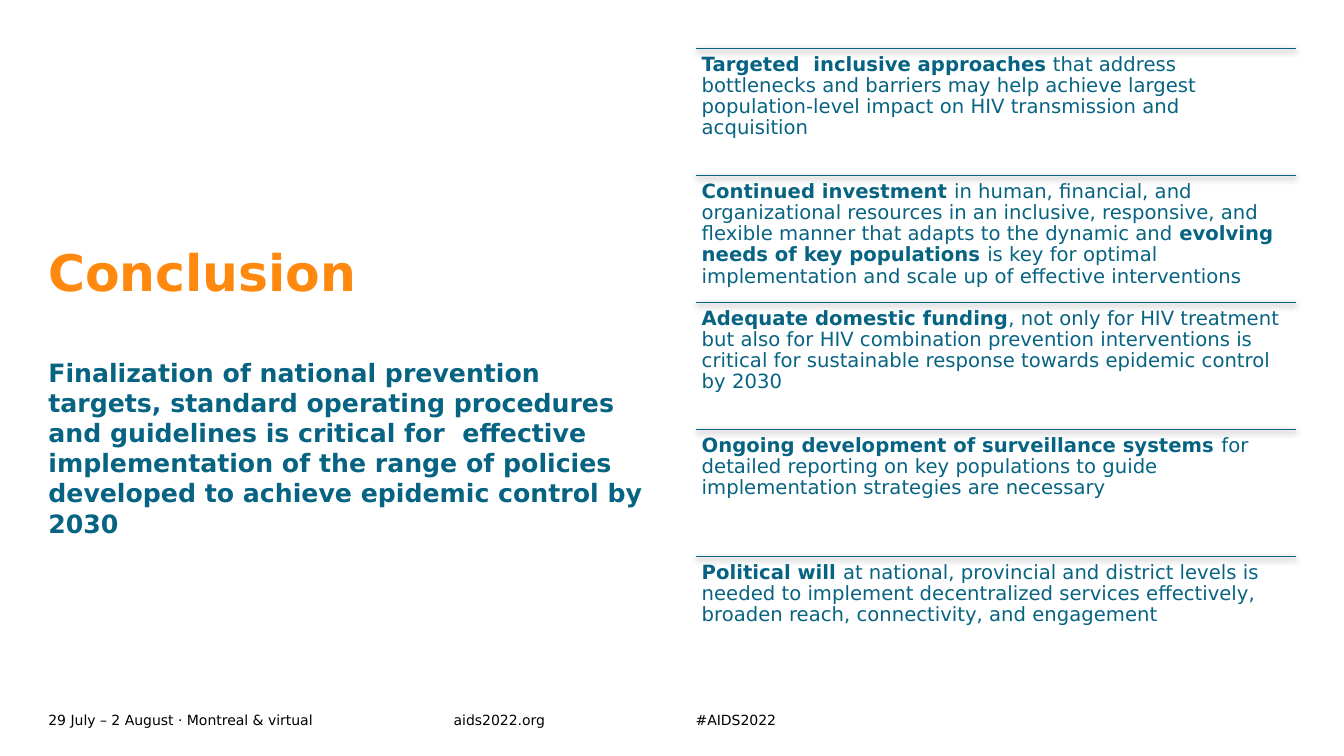
"""Build the Conclusion slide: a summary on the left and five ruled points on the right."""
from dataclasses import dataclass

from lxml import etree
from pptx import Presentation
from pptx.dml.color import RGBColor as RGB
from pptx.enum.shapes import MSO_CONNECTOR as CONN
from pptx.enum.text import MSO_ANCHOR as ANCHOR
from pptx.oxml import parse_xml
from pptx.util import Inches, Pt

TITLE = "Conclusion"
SUMMARY = (
    "Finalization of national prevention targets, standard operating procedures "
    "and guidelines is critical for  effective implementation of the range of "
    "policies developed to achieve epidemic control by 2030"
)
POINTS = [
    [("Targeted  inclusive approaches", True),
     (" that address bottlenecks and barriers may help achieve largest "
      "population-level impact on HIV transmission and acquisition", False)],
    [("Continued investment ", True),
     ("in human, financial, and organizational resources in an inclusive, responsive, "
      "and flexible manner that adapts to the dynamic and ", False),
     ("evolving needs of key populations ", True),
     ("is key for optimal implementation and scale up of effective interventions", False)],
    [("Adequate domestic funding", True),
     (", not only for HIV treatment but also for HIV combination prevention interventions "
      "is critical for sustainable response towards epidemic control by 2030", False)],
    [("Ongoing development of surveillance systems ", True),
     ("for detailed reporting on key populations to guide implementation strategies "
      "are necessary", False)],
    [("Political will ", True),
     ("at national, provincial and district levels is needed to implement decentralized "
      "services effectively, broaden reach, connectivity, and engagement", False)],
]
LEFT, RIGHT, COL_W = 0.48, 6.9, 5.95
POINTS_TOP, POINT_H = 0.48, 1.26
FOOTER_TOP, FOOTER_H = 7.02, 0.24
FOOTER = [
    ("29 July – 2 August · Montreal & virtual", LEFT, 4.02),
    ("aids2022.org", 4.5, 1.93),
    ("#AIDS2022", RIGHT, 1.93),
]


@dataclass(frozen=True)
class Theme:
    font: str = "DejaVu Sans"
    teal: RGB = RGB(0x07, 0x63, 0x82)
    orange: RGB = RGB(0xFF, 0x89, 0x0E)
    black: RGB = RGB(0, 0, 0)
    title: int = 36
    summary: int = 18
    point: int = 14
    footer: int = 10
    rule: float = 0.5


T = Theme()
RULE_SHADOW = (
    '<a:effectLst xmlns:a="http://schemas.openxmlformats.org/drawingml/2006/main">'
    '<a:outerShdw blurRad="57150" dist="19050" dir="5400000" algn="ctr" rotWithShape="0">'
    '<a:srgbClr val="000000"><a:alpha val="63000"/></a:srgbClr>'
    '</a:outerShdw></a:effectLst>'
)


def add_text(s, box, runs, size, color, anchor=ANCHOR.TOP, inset=0, spacing=None):
    tf = s.shapes.add_textbox(*map(Inches, box)).text_frame
    tf.word_wrap = True
    tf.vertical_anchor = anchor
    tf.margin_left = tf.margin_right = tf.margin_top = tf.margin_bottom = Inches(inset)
    p = tf.paragraphs[0]
    p.line_spacing = spacing
    p.font.name, p.font.size, p.font.color.rgb = T.font, Pt(size), color
    for text, bold in runs:
        r = p.add_run()
        r.text, r.font.bold = text, bold


def add_rule(s, top):
    line = s.shapes.add_connector(
        CONN.STRAIGHT, Inches(RIGHT), Inches(top), Inches(RIGHT + COL_W), Inches(top))
    line.line.color.rgb = T.teal
    line.line.width = Pt(T.rule)
    line._element.spPr.append(parse_xml(RULE_SHADOW))


def main():
    prs = Presentation()
    prs.slide_width, prs.slide_height = Inches(13.33), Inches(7.5)
    s = prs.slides.add_slide(prs.slide_layouts[6])

    for text, left, width in FOOTER:
        add_text(s, (left, FOOTER_TOP, width, FOOTER_H), [(text, False)],
                 T.footer, T.black, ANCHOR.MIDDLE)
    add_text(s, (LEFT, 3.54, COL_W, 2.54), [(SUMMARY, True)], T.summary, T.teal)
    add_text(s, (LEFT, 1.82, COL_W, 1.18), [(TITLE, True)],
             T.title, T.orange, ANCHOR.BOTTOM, spacing=0.9)

    for i, runs in enumerate(POINTS):
        top = POINTS_TOP + i * POINT_H
        add_rule(s, top)
        add_text(s, (RIGHT, top, COL_W, POINT_H), runs,
                 T.point, T.teal, inset=0.06, spacing=0.9)

    prs.save("out.pptx")


if __name__ == "__main__":
    main()
